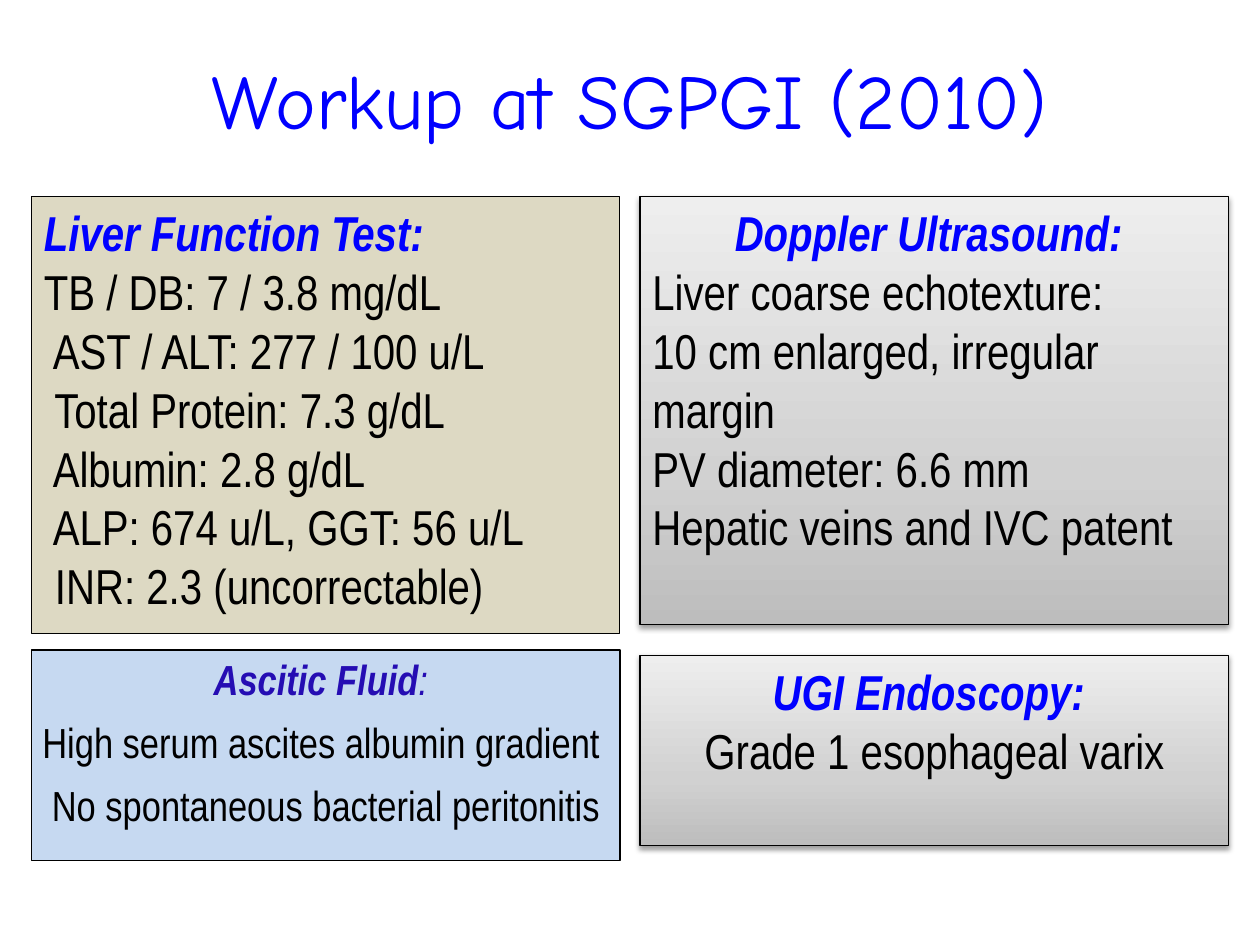
"""Builds the workup slide: a title above four panels of clinical findings."""
from lxml import etree
from pptx import Presentation
from pptx.dml.color import RGBColor
from pptx.enum.shapes import MSO_SHAPE
from pptx.enum.text import MSO_ANCHOR, PP_ALIGN
from pptx.oxml import parse_xml
from pptx.util import Inches, Pt

RECTANGLE = MSO_SHAPE.RECTANGLE
LEFT, CENTER = PP_ALIGN.LEFT, PP_ALIGN.CENTER
TOP, MIDDLE = MSO_ANCHOR.TOP, MSO_ANCHOR.MIDDLE
NAMESPACE = "http://schemas.openxmlformats.org/drawingml/2006/main"

COLORS = {
    "blue": "0000FF",
    "indigo": "250DB3",
    "black": "000000",
    "tan": "DDD9C3",
    "sky": "C6D9F1",
}
GRADIENT = [(0, "BDBDBD"), (35, "D1D1D1"), (100, "EEEEEE")]
TITLE = "Workup at SGPGI (2010)"
BODY_FONT, TITLE_FONT = "Arial Narrow", "Comic Neue"
COLUMN_LEFTS, PANEL_WIDTH = (0.25, 5.08), 4.67

PANELS = [
    {
        "column": 0, "top": 1.56, "height": 3.47, "fill": "tan",
        "heading": "Liver Function Test:", "heading_align": LEFT,
        "lines": [
            "TB / DB: 7 / 3.8 mg/dL",
            " AST / ALT: 277 / 100 u/L",
            " Total Protein: 7.3 g/dL",
            " Albumin: 2.8 g/dL",
            " ALP: 674 u/L, GGT: 56 u/L",
            " INR: 2.3 (uncorrectable)",
        ],
    },
    {
        "column": 0, "top": 5.16, "height": 1.67, "fill": "sky", "border": 1,
        "heading": "Ascitic Fluid", "heading_tail": ": ",
        "heading_color": "indigo", "align": CENTER,
        "size": 24, "space_before": 7, "inset": 0.03,
        "lines": [
            "High serum ascites albumin gradient ",
            "No spontaneous bacterial peritonitis",
        ],
    },
    {
        "column": 1, "top": 1.56, "height": 3.4,
        "heading": "Doppler Ultrasound: ",
        "lines": [
            "Liver coarse echotexture:",
            "10 cm enlarged, irregular margin",
            "PV diameter: 6.6 mm",
            "Hepatic veins and IVC patent",
        ],
    },
    {
        "column": 1, "top": 5.2, "height": 1.51,
        "heading": "UGI Endoscopy: ", "align": CENTER,
        "lines": ["Grade 1 esophageal varix"],
    },
]


def add_text(paragraph, text, *, size, color, font=BODY_FONT, bold=False,
             italic=False, align=LEFT, space_before=0):
    paragraph.alignment = align
    paragraph.space_before = Pt(space_before)
    run = paragraph.add_run()
    run.text = text
    run.font.name = font
    run.font.size = Pt(size)
    run.font.bold = bold
    run.font.italic = italic
    run.font.color.rgb = RGBColor.from_string(COLORS[color])


def apply_gradient(shape):
    shape.fill.gradient()
    shape.fill.gradient_angle = 90
    stop_list = shape.element.spPr.find(f".//{{{NAMESPACE}}}gsLst")
    for stop in list(stop_list):
        stop_list.remove(stop)
    for position, color in GRADIENT:
        stop = etree.SubElement(stop_list, f"{{{NAMESPACE}}}gs", pos=str(position * 1000))
        etree.SubElement(stop, f"{{{NAMESPACE}}}srgbClr", val=color)


def apply_shadow(shape):
    properties = shape.element.spPr
    properties.remove(properties.find(f"{{{NAMESPACE}}}effectLst"))
    properties.append(parse_xml(
        f'<a:effectLst xmlns:a="{NAMESPACE}">'
        f'<a:outerShdw blurRad="{Pt(3.1)}" dist="{Pt(1.6)}" dir="5400000" rotWithShape="0">'
        f'<a:srgbClr val="{COLORS["black"]}"><a:alpha val="38000"/></a:srgbClr>'
        '</a:outerShdw></a:effectLst>'))


def add_panel(slide, panel):
    shape = slide.shapes.add_shape(
        RECTANGLE, Inches(COLUMN_LEFTS[panel["column"]]), Inches(panel["top"]),
        Inches(PANEL_WIDTH), Inches(panel["height"]))
    shape.line.color.rgb = RGBColor.from_string(COLORS["black"])
    shape.line.width = Pt(panel.get("border", 0.75))
    shape.shadow.inherit = False
    if "fill" in panel:
        shape.fill.solid()
        shape.fill.fore_color.rgb = RGBColor.from_string(COLORS[panel["fill"]])
    else:
        apply_gradient(shape)
        apply_shadow(shape)

    frame = shape.text_frame
    frame.word_wrap = True
    frame.vertical_anchor = TOP
    if "inset" in panel:
        inset = Inches(panel["inset"])
        frame.margin_left = frame.margin_right = inset
        frame.margin_top = frame.margin_bottom = inset

    common = {"size": panel.get("size", 28), "space_before": panel.get("space_before", 0)}
    heading = {**common, "color": panel.get("heading_color", "blue"), "italic": True,
               "align": panel.get("heading_align", CENTER)}
    add_text(frame.paragraphs[0], panel["heading"], bold=True, **heading)
    if "heading_tail" in panel:
        add_text(frame.paragraphs[0], panel["heading_tail"], **heading)
    for line in panel["lines"]:
        add_text(frame.add_paragraph(), line, color="black",
                 align=panel.get("align", LEFT), **common)


def main():
    presentation = Presentation()
    presentation.slide_width, presentation.slide_height = Inches(10), Inches(7.5)
    slide = presentation.slides.add_slide(presentation.slide_layouts[5])
    title = slide.shapes.title
    title.left, title.top = Inches(0.5), Inches(0.16)
    title.width, title.height = Inches(9), Inches(1.25)
    title.text_frame.vertical_anchor = MIDDLE
    add_text(title.text_frame.paragraphs[0], TITLE, size=44, color="blue",
             font=TITLE_FONT, align=CENTER)
    for panel in PANELS:
        add_panel(slide, panel)
    presentation.save("out.pptx")


if __name__ == "__main__":
    main()
